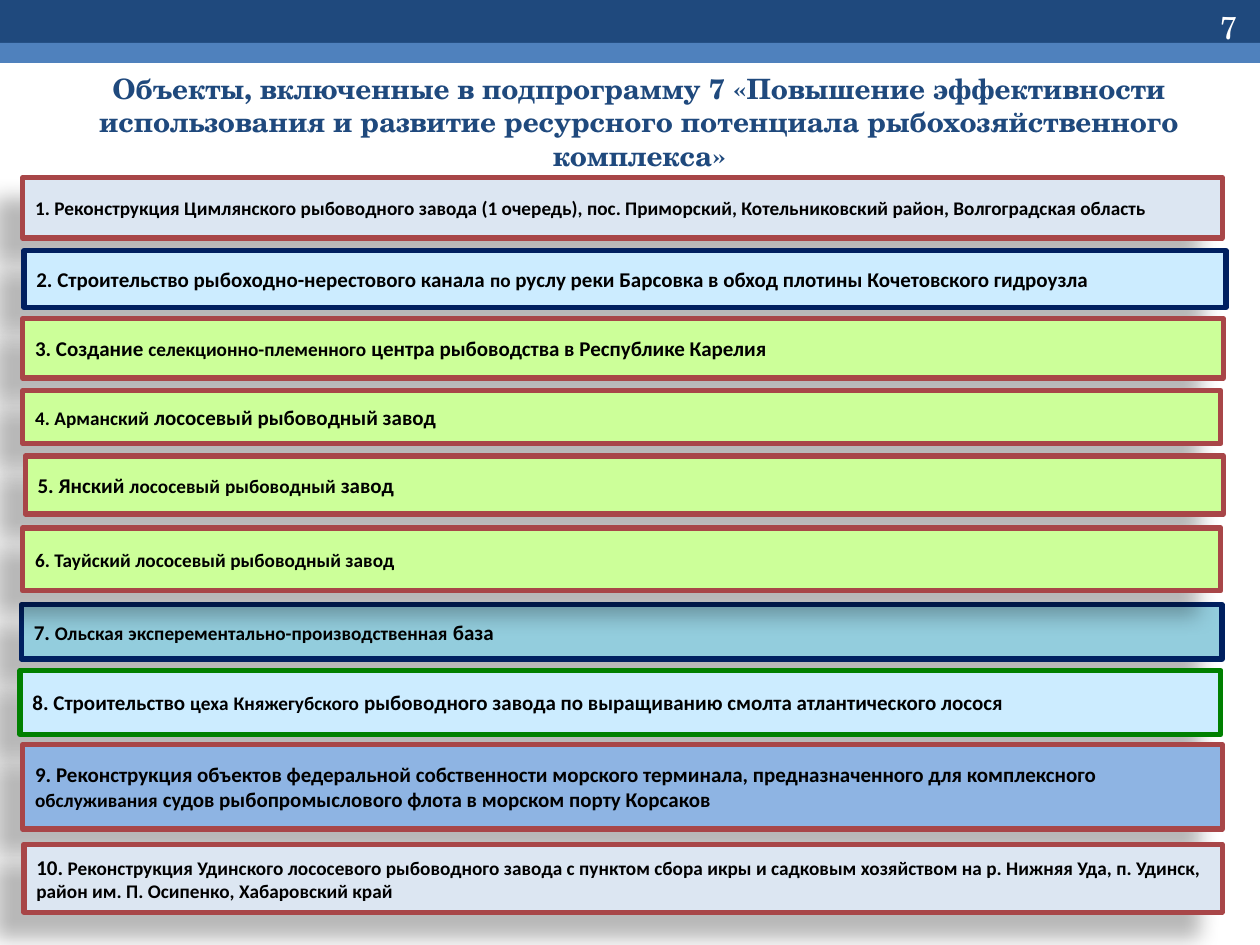
"""Build a slide listing the ten facilities of subprogramme 7."""
import dataclasses
import typing

import lxml.etree
import pptx
import pptx.dml.color
import pptx.enum.shapes
import pptx.enum.text
import pptx.oxml.ns
import pptx.util

Inches = pptx.util.Inches
Pt = pptx.util.Pt
Anchor = pptx.enum.text.MSO_ANCHOR
Align = pptx.enum.text.PP_ALIGN


@dataclasses.dataclass(frozen=True)
class Theme:
    navy: str = "1F497D"
    blue: str = "4F81BD"
    white: str = "FFFFFF"
    black: str = "000000"
    pale: str = "DCE6F2"
    sky: str = "CCECFF"
    lime: str = "CCFF99"
    teal: str = "93CDDD"
    steel: str = "8EB4E3"
    red_line: str = "A84648"
    navy_line: str = "002060"
    green_line: str = "008000"
    heading_font: str = "TeX Gyre Schola"
    body_font: str = "Calibri"
    small: int = 11
    normal: int = 12
    title: int = 16
    number: int = 18
    line_width: int = 3


THEME = Theme()


class Box(typing.NamedTuple):
    left: float
    top: float
    width: float
    height: float

    def lengths(self) -> list[pptx.util.Length]:
        return [Inches(value) for value in self]


class Run(typing.NamedTuple):
    text: str
    size: int = THEME.normal
    bold: bool = True
    color: str = THEME.black
    font: str = THEME.body_font


class Facility(typing.NamedTuple):
    box: Box
    fill: str
    line: str
    runs: tuple[Run, ...]


def small(text: str, bold: bool = True) -> Run:
    return Run(text, THEME.small, bold)


BANDS = (
    (Box(0, 0, 10, 0.34), THEME.navy),
    (Box(0, 0.34, 10, 0.16), THEME.blue),
)
TITLE = Run(
    "Объекты, включенные в подпрограмму 7 «Повышение эффективности использования "
    "и развитие ресурсного потенциала рыбохозяйственного комплекса»",
    THEME.title, True, THEME.navy, THEME.heading_font,
)
NUMBER = Run("7", THEME.number, False, THEME.white, THEME.heading_font)
FACILITIES = (
    Facility(Box(0.18, 1.41, 9.52, 0.48), THEME.pale, THEME.red_line, (
        small("1. Реконструкция Цимлянского рыбоводного завода (1 очередь), "
              "пос. Приморский, Котельниковский район, Волгоградская область"),)),
    Facility(Box(0.19, 1.99, 9.54, 0.45), THEME.sky, THEME.navy_line, (
        Run("2. Строительство рыбоходно-нерестового канала "), small("по"),
        Run(" руслу реки Барсовка в обход плотины Кочетовского гидроузла"))),
    Facility(Box(0.18, 2.53, 9.53, 0.47), THEME.lime, THEME.red_line, (
        Run("3. Создание "), small("селекционно-племенного"),
        Run(" центра рыбоводства в Республике Карелия"))),
    Facility(Box(0.18, 3.1, 9.51, 0.42), THEME.lime, THEME.red_line, (
        small("4. Арманский"), Run(" лососевый рыбоводный завод"))),
    Facility(Box(0.17, 4.8, 9.53, 0.43), THEME.teal, THEME.navy_line, (
        Run("7. "), small("Ольская"), Run(" "),
        small("эксперементально-производственная"), Run(" база"))),
    Facility(Box(0.16, 5.32, 9.53, 0.51), THEME.sky, THEME.green_line, (
        Run("8. Строительство "), small("цеха"), Run(" "), small("Княжегубского"),
        Run(" рыбоводного завода по выращиванию смолта атлантического лосося"))),
    Facility(Box(0.18, 5.91, 9.52, 0.67), THEME.steel, THEME.red_line, (
        Run("9. Реконструкция объектов федеральной собственности морского терминала, "
            "предназначенного для комплексного "), small("обслуживания"),
        Run(" судов рыбопромыслового флота в морском порту Корсаков"))),
    Facility(Box(0.2, 3.62, 9.51, 0.46), THEME.lime, THEME.red_line, (
        Run("5. Янский "), small("лососевый"), Run(" "), small("рыбоводный"),
        Run(" завод"))),
    Facility(Box(0.18, 4.19, 9.51, 0.5), THEME.lime, THEME.red_line, (
        small("6. Тауйский лососевый рыбоводный завод"),)),
    Facility(Box(0.19, 6.7, 9.51, 0.54), THEME.pale, THEME.red_line, (
        Run("10."), small(" ", False),
        small("Реконструкция Удинского лососевого рыбоводного завода с пунктом сбора "
              "икры и садковым хозяйством на р. Нижняя Уда, п. Удинск, "
              "район им. П. Осипенко, Хабаровский край"))),
)


def rgb(color: str) -> pptx.dml.color.RGBColor:
    return pptx.dml.color.RGBColor.from_string(color)


def apply(target: typing.Any, values: dict[str, typing.Any]) -> None:
    for name, value in values.items():
        setattr(target, name, value)


def write(shape: typing.Any, runs: tuple[Run, ...], align: Align,
          frame_format: dict[str, typing.Any]) -> None:
    apply(shape.text_frame, frame_format)
    paragraph = shape.text_frame.paragraphs[0]
    paragraph.alignment = align
    for item in runs:
        run = paragraph.add_run()
        run.text = item.text
        apply(run.font, {"name": item.font, "size": Pt(item.size), "bold": item.bold})
        run.font.color.rgb = rgb(item.color)


def add_rectangle(slide: typing.Any, box: Box, fill: str) -> typing.Any:
    shape = slide.shapes.add_shape(
        pptx.enum.shapes.MSO_SHAPE.RECTANGLE, *box.lengths())
    shape.shadow.inherit = False
    shape.fill.solid()
    shape.fill.fore_color.rgb = rgb(fill)
    shape.line.fill.background()
    return shape


def add_shadow(shape: typing.Any) -> None:
    qn = pptx.oxml.ns.qn
    effects = shape._element.spPr.find(qn("a:effectLst"))
    shadow = lxml.etree.SubElement(effects, qn("a:outerShdw"), {
        "blurRad": str(Pt(11.8)), "dist": str(Pt(19.7)),
        "dir": str(141 * 60000), "algn": "ctr", "rotWithShape": "0"})
    color = lxml.etree.SubElement(shadow, qn("a:srgbClr"), val=THEME.black)
    lxml.etree.SubElement(color, qn("a:alpha"), val="28000")


def add_facility(slide: typing.Any, facility: Facility) -> None:
    shape = add_rectangle(slide, facility.box, facility.fill)
    shape.line.color.rgb = rgb(facility.line)
    shape.line.width = Pt(THEME.line_width)
    add_shadow(shape)
    write(shape, facility.runs, Align.LEFT,
          {"word_wrap": True, "vertical_anchor": Anchor.MIDDLE})


def main() -> None:
    presentation = pptx.Presentation()
    apply(presentation, {"slide_width": Inches(10), "slide_height": Inches(7.5)})
    slide = presentation.slides.add_slide(presentation.slide_layouts[6])
    for box, fill in BANDS:
        add_rectangle(slide, box, fill)
    title = slide.shapes.add_textbox(*Box(0.5, 0.67, 9.15, 0.59).lengths())
    margins = {f"margin_{side}": Inches(0.04) for side in ("left", "top", "right", "bottom")}
    write(title, (TITLE,), Align.CENTER,
          {"word_wrap": True, "vertical_anchor": Anchor.MIDDLE, **margins})
    for facility in FACILITIES:
        add_facility(slide, facility)
    number = slide.shapes.add_textbox(*Box(9.56, 0.03, 0.36, 0.38).lengths())
    write(number, (NUMBER,), Align.RIGHT,
          {"word_wrap": False, "vertical_anchor": Anchor.BOTTOM})
    presentation.save("out.pptx")


if __name__ == "__main__":
    main()
